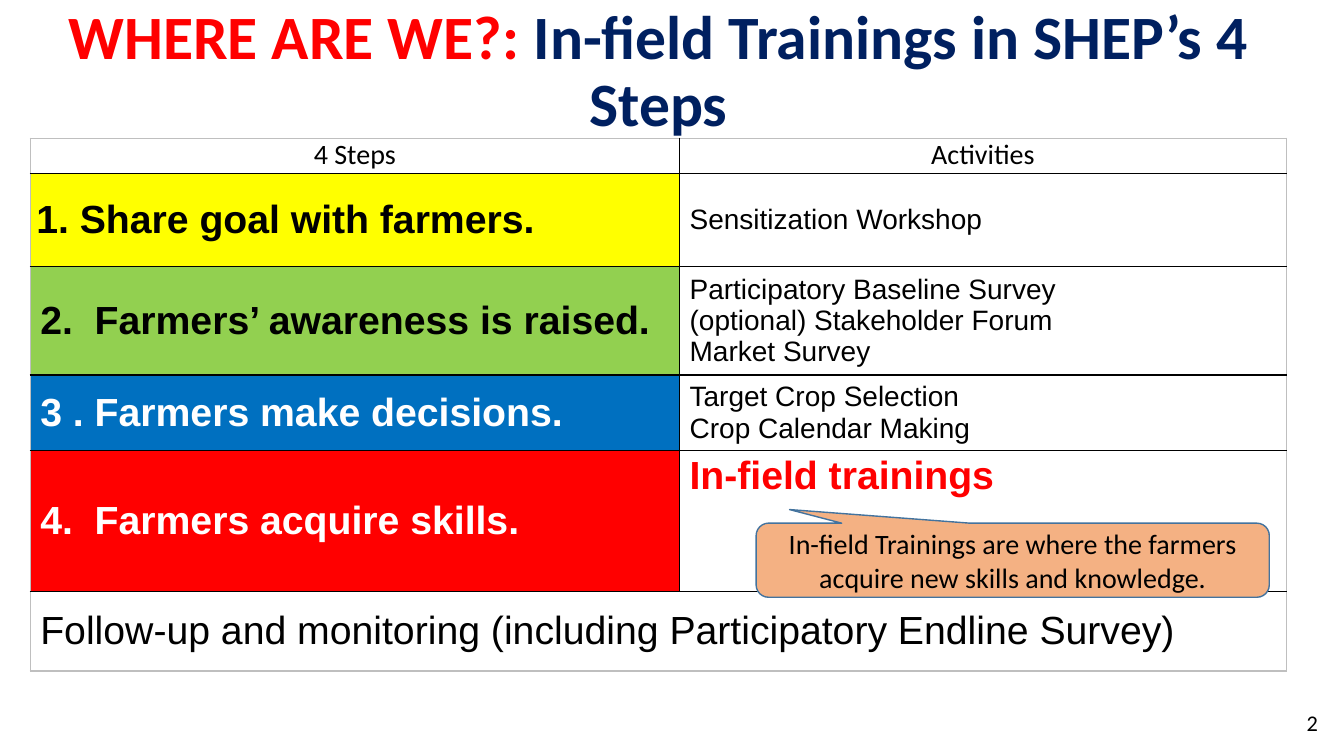
from lxml import etree
from pptx import Presentation, util as u
from pptx.dml.color import RGBColor
from pptx.enum import shapes, text
from pptx.oxml.ns import qn

hues = {
    "black": "000000", "white": "FFFFFF", "red": "FF0000", "navy": "002060",
    "yellow": "FFFF00", "green": "92D050", "blue": "0070C0",
    "peach": "F4B183", "steel": "43739E", "grey": "BFBFBF",
}
mid, top = text.MSO_ANCHOR.MIDDLE, text.MSO_ANCHOR.TOP
left, mean, right = text.PP_ALIGN.LEFT, text.PP_ALIGN.CENTER, text.PP_ALIGN.RIGHT

deck = Presentation()
deck.slide_width, deck.slide_height = u.Inches(13.33), u.Inches(7.5)
slide = deck.slides.add_slide(deck.slide_layouts[5])


def area(x, y, w, h):
    wide, high = deck.slide_width / 100, deck.slide_height / 100
    return [int(n) for n in (x * wide, y * high, w * wide, h * high)]


def style(font, face, size, hue, bold=False):
    font.name, font.size, font.bold = face, u.Pt(size), bold
    font.color.rgb = RGBColor.from_string(hues[hue])


title = slide.shapes.title
title.left, title.top, title.width, title.height = area(0, 0, 98, 19.33)
frame = title.text_frame
frame.auto_size = text.MSO_AUTO_SIZE.NONE
frame.word_wrap, frame.vertical_anchor = True, mid
para = frame.paragraphs[0]
para.alignment, para.line_spacing = mean, 0.9
for words, hue in [("WHERE ARE WE?: ", "red"),
                   ("In-field Trainings in SHEP’s 4 Steps", "navy")]:
    run = para.add_run()
    run.text = words
    style(run.font, "Calibri", 44, hue, True)

page = slide.shapes.add_textbox(*area(76.3, 92.93, 22.5, 5.33))
frame = page.text_frame
frame.word_wrap, frame.vertical_anchor = True, mid
para = frame.paragraphs[0]
para.text, para.alignment = "2", right
style(para.font, "Calibri", 16, "black")

steps = [
    ("1. Share goal with farmers.", "yellow", "black",
     "Sensitization Workshop"),
    ("2.\u00a0 Farmers’ awareness is raised.", "green", "black",
     "Participatory Baseline Survey\n(optional) Stakeholder Forum\nMarket Survey"),
    ("3\u00a0. Farmers make decisions.", "blue", "white",
     "Target Crop Selection\nCrop Calendar Making"),
    ("4.\u00a0 Farmers acquire skills.", "red", "white",
     "In-field trainings"),
]
head = ("Calibri", 20, "black")
small = ("Arial", 20, "black")
cells = [[("4 Steps", "white", head), ("Activities", "white", head)]]
for step, fill, ink, task in steps:
    cells.append([(step, fill, ("Arial", 28, ink, True)), (task, "white", small)])
cells[4][1] = (steps[3][3], "white", ("Arial", 28, "red", True))
cells.append([("Follow-up and monitoring (including Participatory Endline Survey)",
               "white", ("Arial", 28, "black")), ("", "white", small)])

cols = [48.31, 45.16]
rows = [4.67, 12.27, 13.73, 9.47, 18.67, 10.53]
grid = slide.shapes.add_table(
    len(rows), len(cols), *area(2.25, 18.27, sum(cols), sum(rows))).table
grid.first_row = grid.horz_banding = False
for col, share in zip(grid.columns, cols):
    col.width = area(0, 0, share, 0)[2]
for row, share in zip(grid.rows, rows):
    row.height = area(0, 0, 0, share)[3]
grid.cell(5, 0).merge(grid.cell(5, 1))

for r, line in enumerate(cells):
    for c, (words, fill, look) in enumerate(line):
        cell = grid.cell(r, c)
        cell.fill.solid()
        cell.fill.fore_color.rgb = RGBColor.from_string(hues[fill])
        tight = r == 0 or (r, c) == (1, 0)
        cell.margin_left = cell.margin_right = u.Inches(0.06 if tight else 0.1)
        cell.margin_top = cell.margin_bottom = u.Inches(0 if tight else 0.04)
        cell.vertical_anchor = top if r == 0 or (r, c) == (4, 1) else mid
        if words:
            cell.text = words
        for para in cell.text_frame.paragraphs:
            para.alignment = mean if r == 0 else left
            style(para.font, *look)
        outer = {"L": c == 0, "R": c == 1 or r == 5, "T": r == 0, "B": r == 5}
        props = cell._tc.get_or_add_tcPr()
        for i, (side, edge) in enumerate(outer.items()):
            rule = etree.Element(qn("a:ln" + side), w=str(u.Pt(1)))
            paint = etree.SubElement(rule, qn("a:solidFill"))
            etree.SubElement(paint, qn("a:srgbClr"),
                             val=hues["grey" if edge else "black"])
            props.insert(i, rule)

note = slide.shapes.add_shape(
    shapes.MSO_SHAPE.ROUNDED_RECTANGULAR_CALLOUT, *area(56.26, 69.2, 38.18, 9.8))
for i, bend in enumerate([-0.435, -0.684, 0.167]):
    note.adjustments[i] = bend
note.shadow.inherit = False
note.fill.solid()
note.fill.fore_color.rgb = RGBColor.from_string(hues["peach"])
note.line.color.rgb = RGBColor.from_string(hues["steel"])
note.line.width = u.Pt(1)
frame = note.text_frame
frame.word_wrap, frame.vertical_anchor = True, mid
para = frame.paragraphs[0]
para.text = "In-field Trainings are where the farmers acquire new skills and knowledge."
para.alignment = mean
style(para.font, "Calibri", 20, "black")

deck.save("out.pptx")
